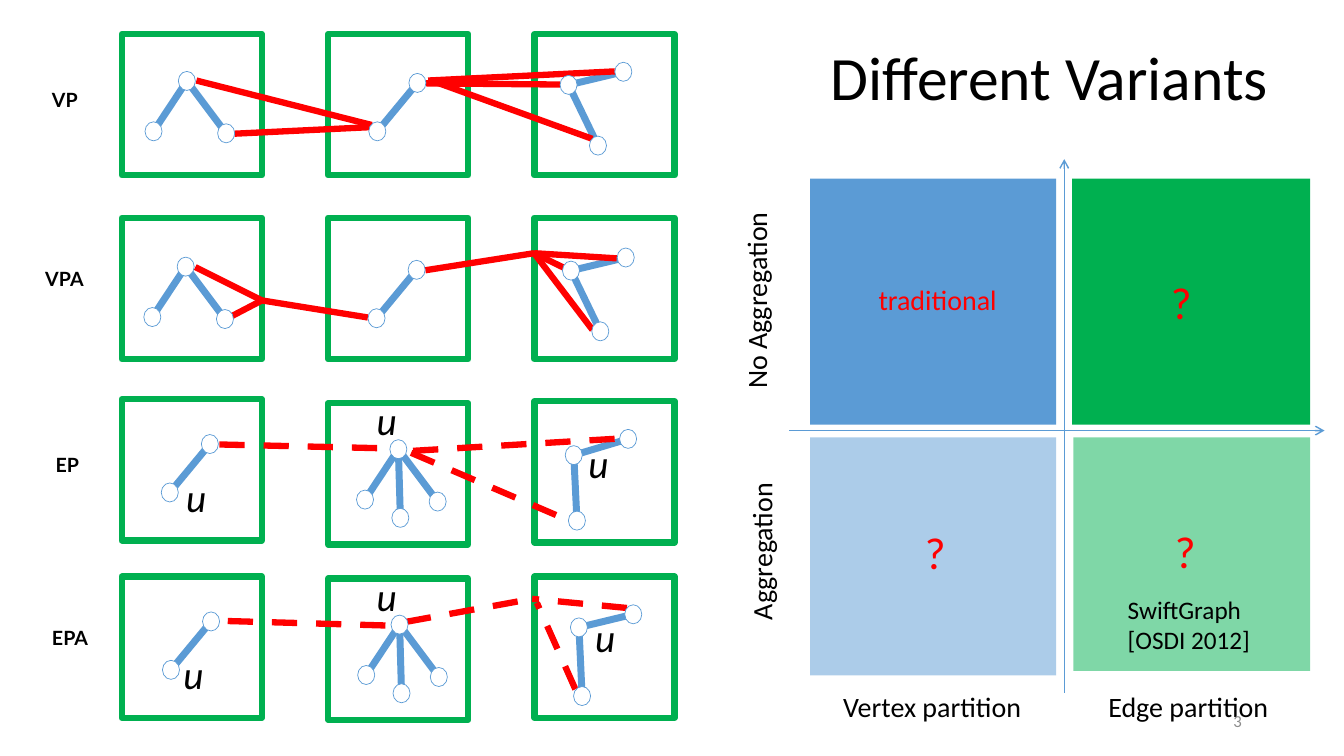
from lxml import etree
from pptx import Presentation
from pptx import util as u
from pptx.dml.color import RGBColor
from pptx.enum import dml, shapes, text
from pptx.oxml.ns import qn

GREEN = RGBColor(0x00, 0xB0, 0x50)
BLUE = RGBColor(0x5B, 0x9B, 0xD5)
RED = RGBColor(0xFF, 0x00, 0x00)
BLACK = RGBColor(0x00, 0x00, 0x00)
WHITE = RGBColor(0xFF, 0xFF, 0xFF)
GREY = RGBColor(0x8C, 0x8C, 0x8C)

# All positions are in centimetres
PANEL_W, PANEL_H, PANEL_STEP = 3.53, 3.56, 5.2
NODE_W, NODE_H = 0.43, 0.48

# Subgraphs: the offsets of the outer vertices from the hub
WEDGE = [(-0.84, 1.27), (0.99, 1.32)]
PAIR = [(-1.01, 1.22)]
HOOK = [(1.38, -0.33), (0.74, 1.53)]
STAR = WEDGE + [(0.05, 1.73)]
BEND = [(1.37, -0.33), (0.08, 1.73)]
LOW_BEND = [(1.37, -0.41), (0.08, 1.65)]

# Points where aggregated links meet
VPA_LEFT, VPA_RIGHT, EPA_RIGHT = (3.53, 2.08), (10.39, 0.89), (10.34, 0.56)

ROWS_LEFT = 3.07
VARIANTS = [
    dict(name="VP", top=0.86, label=(-2.38, 1.22, 1.52),
         subgraphs=[((1.64, 1.18), WEDGE), ((7.45, 1.23), PAIR), ((11.26, 1.28), HOOK)],
         links=[((1.88, 1.17), (6.3, 2.29)), ((2.84, 2.51), (6.35, 2.34)),
                ((7.67, 1.24), (11.05, 1.27)), ((7.8, 1.17), (11.86, 2.64)),
                ((7.72, 1.17), (12.42, 0.94))]),
    dict(name="VPA", top=5.49, label=(-2.89, 1.12, 2.18),
         subgraphs=[((1.61, 1.23), WEDGE), ((7.43, 1.31), PAIR), ((11.32, 1.33), HOOK)],
         links=[((1.85, 1.24), VPA_LEFT), ((2.59, 2.57), VPA_LEFT), (VPA_LEFT, (6.2, 2.51)),
                ((12.47, 1.02), VPA_RIGHT), ((11.33, 1.35), VPA_RIGHT),
                ((11.86, 2.82), VPA_RIGHT), (VPA_RIGHT, (7.65, 1.32))]),
    dict(name="EP", top=10.06, label=(-2.23, 1.24, 1.4), drops=(0, 0.1, 0.05), dashed=True,
         subgraphs=[((2.22, 1.13), PAIR), ((6.97, 1.26), STAR), ((11.39, 1.41), LOW_BEND)],
         links=[((2.46, 1.14), (6.76, 1.24)), ((7.29, 1.35), (11.25, 3.05)),
                ((7.34, 1.3), (12.55, 0.99))],
         replicas=[(6.17, -0.2), (1.37, 1.73), (11.51, 0.89)]),
    dict(name="EPA", top=14.53, label=(-2.84, 1.12, 2.24), drops=(0, 0.05, 0), dashed=True,
         subgraphs=[((2.25, 1.13), PAIR), ((7.0, 1.21), STAR), ((11.52, 1.28), BEND)],
         links=[((12.73, 0.79), EPA_RIGHT), ((11.43, 2.84), (10.46, 0.66)),
                ((2.67, 1.12), (6.96, 1.24)), ((7.16, 1.14), EPA_RIGHT)],
         replicas=[(6.17, -0.23), (1.3, 1.73), (11.68, 0.81)]),
]


def write(slide, words, left, top, width, height, size=20, color=BLACK, font="Calibri",
          bold=False, italic=False, align=text.PP_ALIGN.LEFT, wrap=False,
          anchor=text.MSO_ANCHOR.TOP, rotation=0):
    label = slide.shapes.add_textbox(u.Cm(left), u.Cm(top), u.Cm(width), u.Cm(height))
    label.rotation = rotation
    frame = label.text_frame
    frame.word_wrap = wrap
    frame.vertical_anchor = anchor
    frame.text = words
    for paragraph in frame.paragraphs:
        paragraph.alignment = align
        for run in paragraph.runs:
            run.font.size, run.font.name = u.Pt(size), font
            run.font.bold, run.font.italic = bold, italic
            run.font.color.rgb = color


def block(slide, kind, left, top, width, height, fill, line=None, weight=1.0, alpha=None):
    shape = slide.shapes.add_shape(kind, u.Cm(left), u.Cm(top), u.Cm(width), u.Cm(height))
    shape.shadow.inherit = False
    shape.fill.solid()
    shape.fill.fore_color.rgb = fill
    if alpha:
        tint = shape.fill._xPr.find(qn("a:solidFill"))[0]
        etree.SubElement(tint, qn("a:alpha"), val=str(alpha * 1000))
    if line is None:
        shape.line.fill.background()
    else:
        shape.line.color.rgb = line
        shape.line.width = u.Pt(weight)


def connect(slide, start, end, color, weight, dashed=False, arrow=False):
    link = slide.shapes.add_connector(shapes.MSO_CONNECTOR.STRAIGHT,
                                      *(u.Cm(v) for v in (*start, *end)))
    link.line.color.rgb = color
    link.line.width = u.Pt(weight)
    if dashed:
        link.line.dash_style = dml.MSO_LINE.DASH
    if arrow:
        etree.SubElement(link.line._get_or_add_ln(), qn("a:tailEnd"), type="arrow")
    etree.SubElement(link._element.spPr, qn("a:effectLst"))


def variant_row(slide, left, top, name, label, subgraphs, links,
                drops=(0, 0, 0), dashed=False, replicas=()):
    def place(point):
        return left + point[0], top + point[1]

    # Machines
    for column, drop in enumerate(drops):
        block(slide, shapes.MSO_SHAPE.RECTANGLE, left + column * PANEL_STEP, top + drop,
              PANEL_W, PANEL_H, WHITE, GREEN, 4.5)
    write(slide, name, *place(label), label[2], 0.86, size=14, font="Lato", bold=True,
          align=text.PP_ALIGN.RIGHT, wrap=True)

    # Local edges
    vertices = []
    for hub, offsets in subgraphs:
        outer = [(hub[0] + dx, hub[1] + dy) for dx, dy in offsets]
        vertices += [hub, *outer]
        for vertex in outer:
            connect(slide, place(hub), place(vertex), BLUE, 5)

    # Replicated vertex names and links between machines
    for replica in replicas:
        write(slide, "u", *place(replica), 1.02, 1.45, size=28, italic=True)
    for start, end in links:
        connect(slide, place(start), place(end), RED, 4.5, dashed=dashed)

    # Vertices
    for vertex in vertices:
        x, y = place(vertex)
        block(slide, shapes.MSO_SHAPE.OVAL, x - NODE_W / 2, y - NODE_H / 2,
              NODE_W, NODE_H, WHITE, BLUE, 0.5)


def quadrants(slide, left, top):
    # Fields
    for x, y, width, height, fill, alpha in [
            (6.63, 6.52, 5.97, 5.89, GREEN, 50), (6.6, 0, 6, 6.2, GREEN, None),
            (0, 6.52, 6.2, 6, BLUE, 50), (0, 0, 6.2, 6.2, BLUE, None)]:
        block(slide, shapes.MSO_SHAPE.RECTANGLE, left + x, top + y, width, height,
              fill, alpha=alpha)

    # Axes
    connect(slide, (left + 6.4, top + 12.95), (left + 6.4, top - 0.49), BLUE, 1, arrow=True)
    connect(slide, (left - 0.53, top + 6.35), (left + 12.96, top + 6.35), BLUE, 1, arrow=True)

    # Axis and field labels
    for words, x, y, width, style in [
            ("Vertex partition", 0.58, 12.75, 5.05, {}),
            ("Edge partition", 7.26, 12.75, 4.6, {}),
            ("No Aggregation", -3.86, 2.49, 5, dict(rotation=270)),
            ("Aggregation", -3.23, 8.81, 4.01, dict(rotation=270)),
            ("traditional", 1.47, 2.49, 3.53, dict(color=RED))]:
        write(slide, words, left + x, top + y, width, 1.12, **style)
    for x, y in [(2.64, 8.61), (8.94, 8.56), (8.84, 2.29)]:
        write(slide, "?", left + x, top + y, 1.04, 1.63, size=32, color=RED)
    write(slide, "SwiftGraph\v[OSDI 2012]", left + 7.75, top + 10.34, 3.91, 1.8, size=18)


def heading(slide, left, top, width, height):
    title = slide.shapes.title
    title.left, title.top = u.Cm(left), u.Cm(top)
    title.width, title.height = u.Cm(width), u.Cm(height)
    title.text_frame.text = "Different Variants"
    title.text_frame.vertical_anchor = text.MSO_ANCHOR.MIDDLE
    line = title.text_frame.paragraphs[0]
    line.alignment = text.PP_ALIGN.LEFT
    line.line_spacing = 0.9
    line.font.size, line.font.name = u.Pt(44), "Calibri"
    line.font.color.rgb = BLACK


def main():
    deck = Presentation()
    deck.slide_width, deck.slide_height = u.Cm(33.87), u.Cm(19.05)
    slide = deck.slides.add_slide(deck.slide_layouts[5])
    heading(slide, 20.68, 0.2, 12.12, 3.68)
    for variant in VARIANTS:
        variant_row(slide, ROWS_LEFT, **variant)
    quadrants(slide, 20.42, 4.5)
    # Slide number
    write(slide, "3", 23.93, 17.65, 7.62, 1.02, size=12, color=GREY, wrap=True,
          align=text.PP_ALIGN.RIGHT, anchor=text.MSO_ANCHOR.MIDDLE)
    deck.save("out.pptx")


if __name__ == "__main__":
    main()
